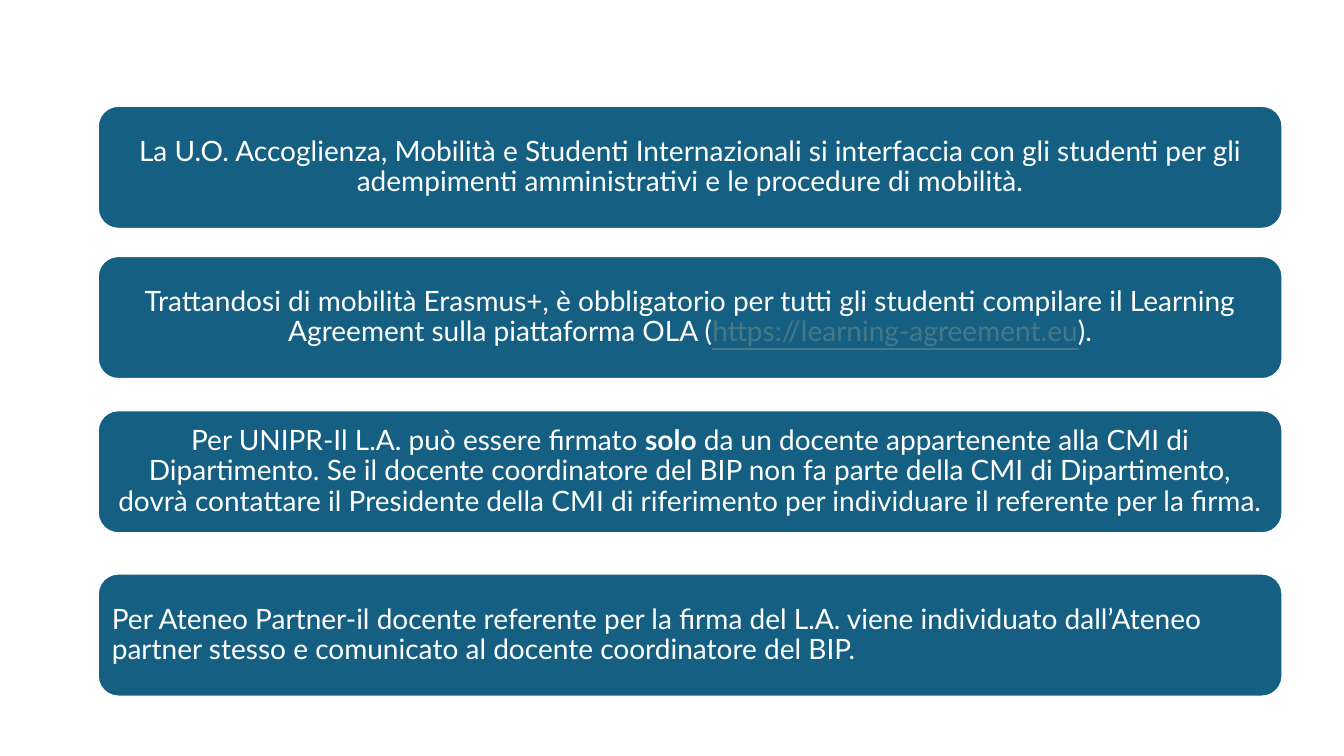
from pptx import Presentation
from pptx.dml.color import RGBColor as RGB
from pptx.enum.shapes import MSO_SHAPE as Shape
from pptx.enum.text import MSO_ANCHOR as Anchor, PP_ALIGN as Align
from pptx.util import Inches, Pt

COLORS = {"card": "156082", "text": "FFFFFF", "edge": "FFFFFF", "link": "467886"}
LEFT, WIDTH, HEIGHT = 0.97, 11.75, 1.22
PAD = Inches(0.08)
LINK = {"color": "link", "underline": True}

# Each card: top, alignment, runs of (text, format)
CARDS = [
    (1.05, Align.CENTER, [
        ("La U.O. Accoglienza, Mobilità e Studenti Internazionali si interfaccia "
         "con gli studenti per gli adempimenti amministrativi e le procedure di "
         "mobilità.", {})]),
    (2.54, Align.CENTER, [
        ("Trattandosi di mobilità Erasmus+, è obbligatorio per tutti gli studenti "
         "compilare il Learning Agreement sulla piattaforma OLA (", {}),
        ("https://learning-agreement.eu", LINK),
        (").", {})]),
    (4.07, Align.CENTER, [
        ("Per UNIPR-Il L.A. può essere firmato ", {}),
        ("solo", {"bold": True}),
        (" da un docente appartenente alla CMI di Dipartimento. Se il docente "
         "coordinatore del BIP non fa parte della CMI di Dipartimento, dovrà "
         "contattare il Presidente della CMI di riferimento per individuare il "
         "referente per la firma.", {})]),
    (5.69, Align.LEFT, [
        ("Per Ateneo Partner-il docente referente per la firma del L.A. viene "
         "individuato dall’Ateneo partner stesso e comunicato al docente "
         "coordinatore del BIP.", {})]),
]


def paint(name):
    return RGB.from_string(COLORS[name])


def write(para, text, size=20, color="text", bold=False, underline=False):
    run = para.add_run()
    run.text = text
    font = run.font
    font.name, font.size = "Lato", Pt(size)
    font.bold, font.underline = bold, underline
    font.color.rgb = paint(color)


def add_card(slide, left, top, width, height, align, runs):
    card = slide.shapes.add_shape(
        Shape.ROUNDED_RECTANGLE,
        Inches(left), Inches(top), Inches(width), Inches(height))
    card.shadow.inherit = False
    card.fill.solid()
    card.fill.fore_color.rgb = paint("card")
    card.line.color.rgb = paint("edge")
    card.line.width = Pt(1.5)

    frame = card.text_frame
    frame.word_wrap = True
    frame.vertical_anchor = Anchor.MIDDLE
    frame.margin_left = frame.margin_right = PAD
    frame.margin_top = frame.margin_bottom = PAD
    para = frame.paragraphs[0]
    para.alignment = align
    para.line_spacing = 0.9
    for text, style in runs:
        write(para, text, **style)


def main():
    deck = Presentation()
    deck.slide_width, deck.slide_height = Inches(13.33), Inches(7.5)
    slide = deck.slides.add_slide(deck.slide_layouts[6])
    for top, align, runs in CARDS:
        add_card(slide, LEFT, top, WIDTH, HEIGHT, align, runs)
    deck.save("out.pptx")


if __name__ == "__main__":
    main()
